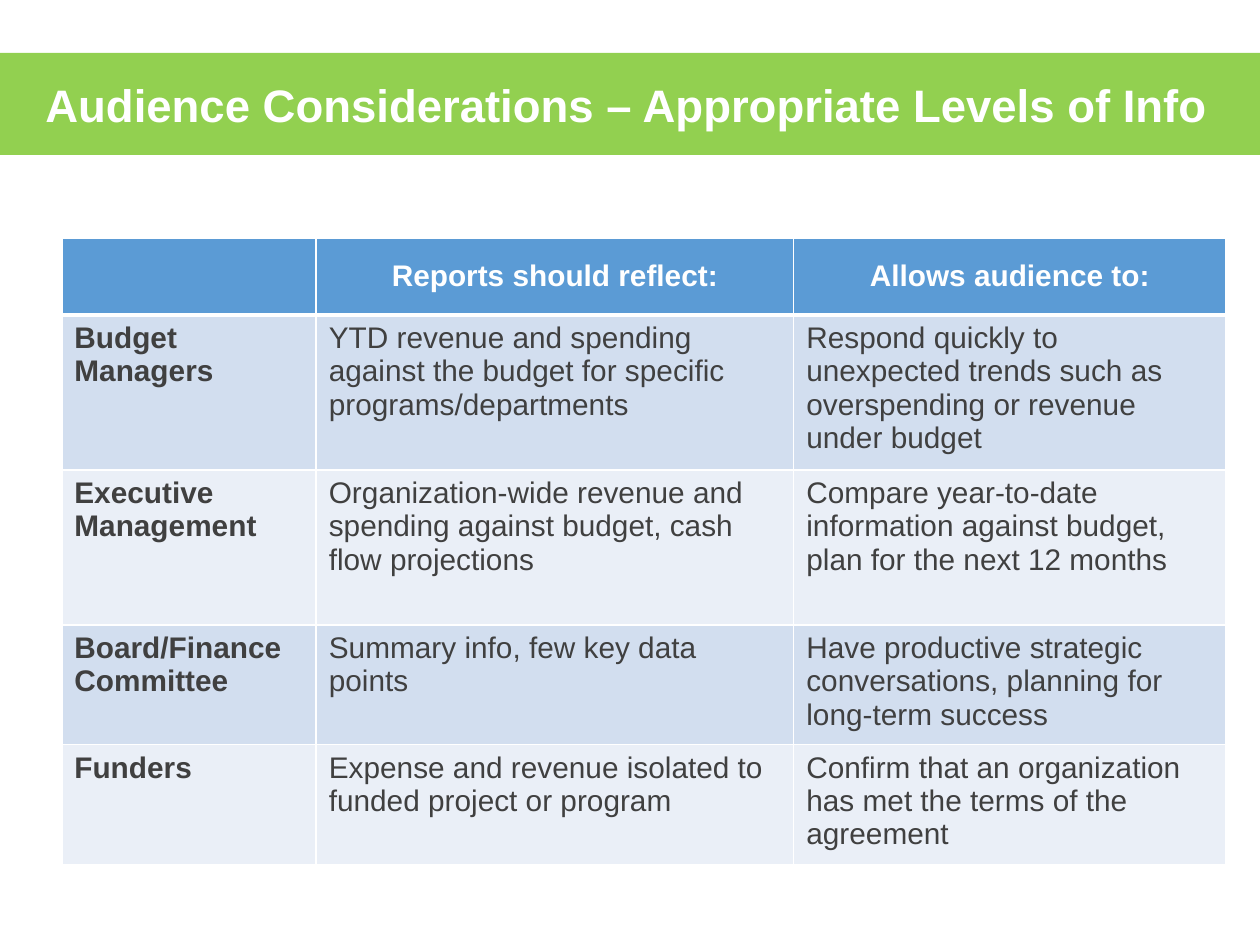
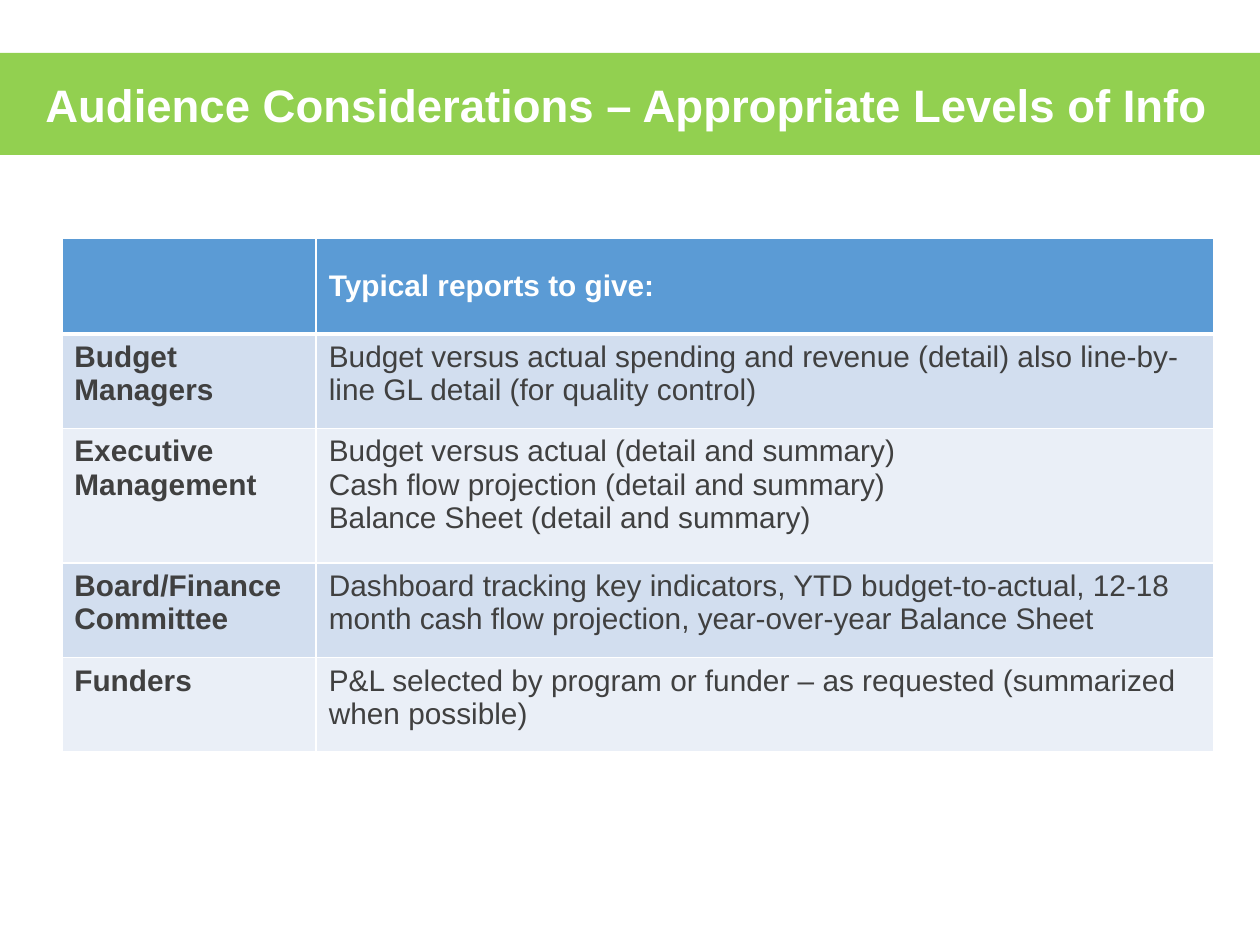
from dataclasses import dataclass
from lxml import etree
from pptx import Presentation
from pptx.dml.color import RGBColor
from pptx.enum.text import MSO_ANCHOR as Anchor, MSO_AUTO_SIZE as AutoSize, PP_ALIGN as Align
from pptx.oxml.ns import qn
from pptx.util import Inches, Pt

# Content
TITLE = "Audience Considerations – Appropriate Levels of Info"
AUDIENCES = ["Budget\nManagers", "Executive Management", "Board/Finance Committee", "Funders"]
SLIDES = [
    dict(
        headers=["Reports should reflect:", "Allows audience to:"],
        header_align=Align.CENTER,
        cols=[2.02, 3.79, 3.43],
        rows=[0.61, 1.23, 1.23, 0.95, 0.95],
        body=[
            ["YTD revenue and spending against the budget for specific programs/departments",
             "Respond quickly to unexpected trends such as overspending or revenue under budget"],
            ["Organization-wide revenue and spending against budget, cash flow projections",
             "Compare year-to-date information against budget, plan for the next 12 months"],
            ["Summary info, few key data points",
             "Have productive strategic conversations, planning for long-term success"],
            ["Expense and revenue isolated to funded project or program",
             "Confirm that an organization has met the terms of the agreement"],
        ],
    ),
    dict(
        headers=["Typical reports to give:"],
        header_align=Align.LEFT,
        cols=[2.02, 7.12],
        rows=[0.76, 0.75, 1.07, 0.75, 0.75],
        body=[
            ["Budget versus actual spending and revenue (detail) also line-by-line GL detail "
             "(for quality control)"],
            ["Budget versus actual (detail and summary)\nCash flow projection (detail and summary)\n"
             "Balance Sheet (detail and summary)"],
            ["Dashboard tracking key indicators, YTD budget-to-actual, 12-18 month cash flow "
             "projection, year-over-year Balance Sheet"],
            ["P&L selected by program or funder – as requested (summarized when possible)"],
        ],
    ),
]


@dataclass(frozen=True)
class Theme:
    font: str = "Arial"
    title_size: float = 26
    table_size: float = 17
    white: str = "FFFFFF"
    text: str = "404040"
    band: str = "92D050"
    header: str = "5B9BD5"
    stripes: tuple = ("D2DEEF", "EAEFF7")
    rule: float = 1
    header_rule: float = 3


T = Theme()


def put_text(tf, text, size=T.table_size, color=T.text, bold=False, align=Align.LEFT,
             left=0, indent=0):
    """Write one paragraph per line of text."""
    for i, line in enumerate(text.split("\n")):
        p = tf.add_paragraph() if i else tf.paragraphs[0]
        p.alignment = align
        if left or indent:
            pPr = p._p.get_or_add_pPr()
            pPr.set("marL", str(Inches(left)))
            pPr.set("indent", str(Inches(indent)))
        r = p.add_run()
        r.text = line
        r.font.name, r.font.size, r.font.bold = T.font, Pt(size), bold
        r.font.color.rgb = RGBColor.from_string(color)


def paint(shape, color):
    shape.fill.solid()
    shape.fill.fore_color.rgb = RGBColor.from_string(color)


def set_borders(cell, top, bottom):
    """White rules on all four sides; they come before the fill in the XML."""
    widths = dict(lnL=T.rule, lnR=T.rule, lnT=top, lnB=bottom)
    tcPr = cell._tc.get_or_add_tcPr()
    for i, (side, width) in enumerate(widths.items()):
        ln = etree.Element(qn(f"a:{side}"), w=str(Pt(width)))
        fill = etree.SubElement(ln, qn("a:solidFill"))
        etree.SubElement(fill, qn("a:srgbClr"), val=T.white)
        tcPr.insert(i, ln)


def add_title(s):
    title = s.shapes.title
    title.left, title.top, title.width, title.height = map(Inches, (0, 0.42, 10, 0.81))
    paint(title, T.band)
    tf = title.text_frame
    tf.auto_size, tf.word_wrap, tf.vertical_anchor = AutoSize.NONE, True, Anchor.MIDDLE
    put_text(tf, TITLE, size=T.title_size, color=T.white, bold=True, left=0.26)


def add_audience_table(s, headers, header_align, cols, rows, body):
    grid = [["", *headers]] + [[name, *cells] for name, cells in zip(AUDIENCES, body)]
    table = s.shapes.add_table(len(rows), len(cols), Inches(0.49), Inches(1.89),
                               Inches(sum(cols)), Inches(sum(rows))).table
    for col, width in zip(table.columns, cols):
        col.width = Inches(width)
    for row, height in zip(table.rows, rows):
        row.height = Inches(height)

    for i, values in enumerate(grid):
        for j, value in enumerate(values):
            cell = table.cell(i, j)
            paint(cell, T.stripes[(i - 1) % 2] if i else T.header)
            set_borders(cell, top=T.header_rule if i == 1 else T.rule,
                        bottom=T.rule if i else T.header_rule)
            if i == 0:
                cell.vertical_anchor = Anchor.MIDDLE
                if value:
                    put_text(cell.text_frame, value, color=T.white, bold=True, align=header_align)
            else:
                hang = 0.2 if j == 0 and "\n" in value else 0
                put_text(cell.text_frame, value, bold=j == 0, left=hang, indent=-hang)


def main():
    prs = Presentation()
    prs.slide_width, prs.slide_height = Inches(10), Inches(7.5)
    title_only = prs.slide_layouts[5]
    for content in SLIDES:
        s = prs.slides.add_slide(title_only)
        add_title(s)
        add_audience_table(s, **content)
    prs.save("out.pptx")


if __name__ == "__main__":
    main()
